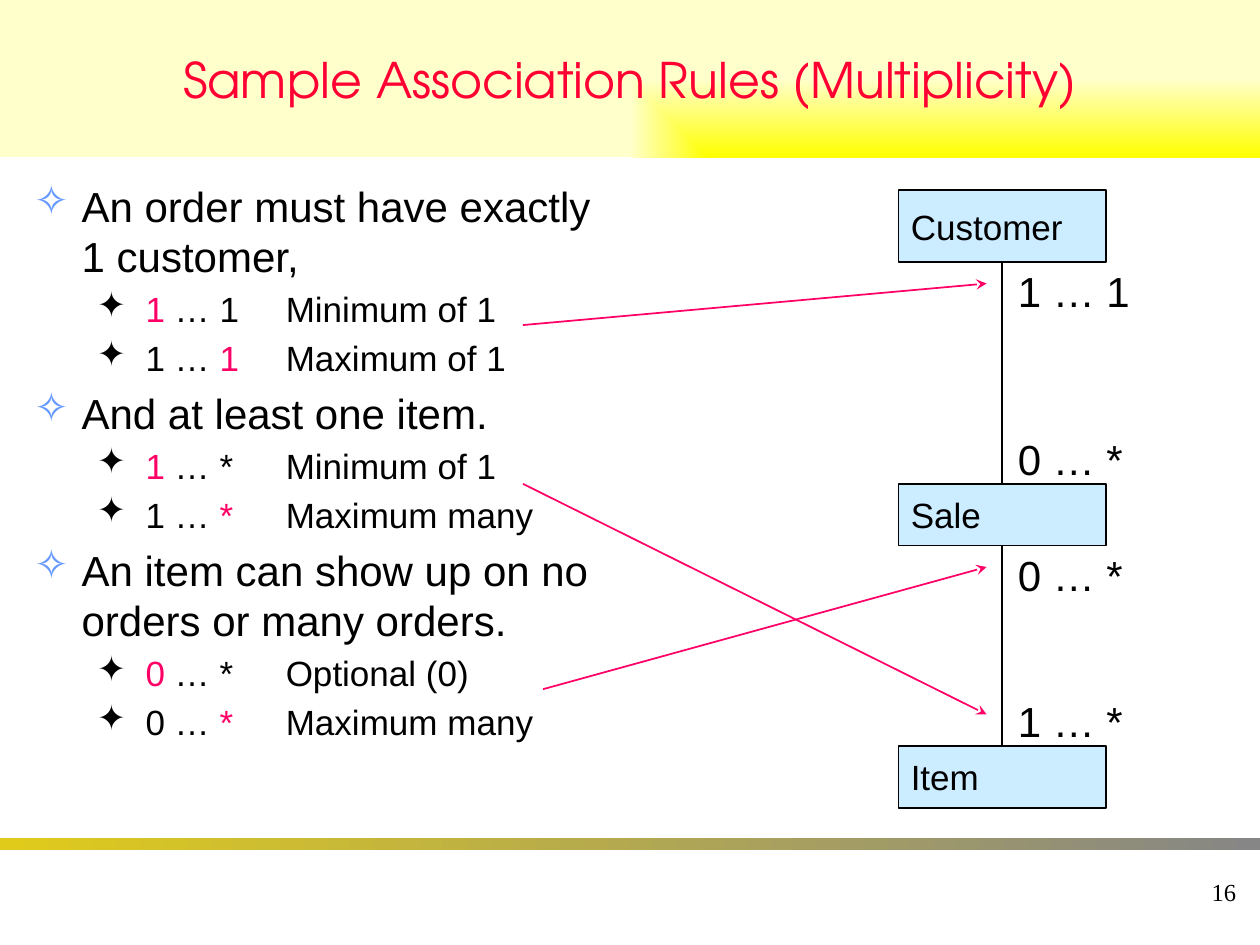
from lxml import etree
from pptx import Presentation
from pptx import util as u
from pptx.dml.color import RGBColor
from pptx.enum import shapes, text
from pptx.oxml import parse_xml
from pptx.oxml.ns import nsdecls, qn

RED = RGBColor(0xFF, 0x00, 0x33)
PINK = RGBColor(0xFF, 0x00, 0x66)
BLACK = RGBColor(0x00, 0x00, 0x00)
BLUE = RGBColor(0x66, 0x99, 0xFF)
SKY = RGBColor(0xCC, 0xEC, 0xFF)
YELLOW = RGBColor(0xFF, 0xFF, 0x00)
CREAM = RGBColor(0xFF, 0xFF, 0xCC)
GOLD = RGBColor(0xE0, 0xCB, 0x1B)
GREY = RGBColor(0x86, 0x86, 0x86)

COLUMNS, ROWS = 100, 75
BULLETS = [("✧", BLUE, 24, 0.38, 0.38), ("✦", BLACK, 20, 0.81, 0.31)]


class SlideBuilder:
    font = "Arial"

    def __init__(self, presentation):
        self.column = presentation.slide_width / COLUMNS
        self.row = presentation.slide_height / ROWS
        self.slide = presentation.slides.add_slide(presentation.slide_layouts[5])

    def place(self, left, top, width, height):
        return (round(left * self.column), round(top * self.row),
                round(width * self.column), round(height * self.row))

    def style(self, paragraph, size, color=BLACK, font=None):
        paragraph.font.size = u.Pt(size)
        paragraph.font.name = font or self.font
        paragraph.font.color.rgb = color

    def gradient(self, shape, start, end):
        shape.fill.gradient()
        shape.fill.gradient_angle = 0
        for stop, position, color in zip(shape.fill.gradient_stops, (0, 1), (start, end)):
            stop.position, stop.color.rgb = position, color

    def title(self, wording, area):
        title = self.slide.shapes.title
        title.left, title.top, title.width, title.height = self.place(*area)
        self.gradient(title, YELLOW, CREAM)
        linear = title.fill._xPr.find(".//" + qn("a:lin"))
        linear.getparent().replace(linear, parse_xml(
            f'<a:path {nsdecls("a")} path="rect">'
            '<a:fillToRect l="100000" t="100000"/></a:path>'))
        frame = title.text_frame
        frame.text = wording
        frame.vertical_anchor = text.MSO_ANCHOR.MIDDLE
        frame.paragraphs[0].alignment = text.PP_ALIGN.CENTER
        self.style(frame.paragraphs[0], 28, RED, "TeX Gyre Adventor")

    def rectangle(self, area):
        shape = self.slide.shapes.add_shape(shapes.MSO_SHAPE.RECTANGLE, *self.place(*area))
        shape.shadow.inherit = False
        return shape

    def bar(self, area):
        shape = self.rectangle(area)
        shape.line.fill.background()
        self.gradient(shape, GOLD, GREY)

    def box(self, wording, area):
        shape = self.rectangle(area)
        shape.fill.solid()
        shape.fill.fore_color.rgb = SKY
        shape.line.color.rgb = BLACK
        shape.line.width = u.Pt(1)
        shape.text_frame.text = wording
        paragraph = shape.text_frame.paragraphs[0]
        paragraph.alignment = text.PP_ALIGN.LEFT
        self.style(paragraph, 20)
        return shape

    def label(self, wording, area, size=24, font=None):
        frame = self.slide.shapes.add_textbox(*self.place(*area)).text_frame
        frame.text = wording
        frame.word_wrap = False
        self.style(frame.paragraphs[0], size, font=font)
        return frame

    def page_number(self, wording, area):
        frame = self.label(wording, area, 14, "Times New Roman")
        frame.word_wrap = True
        frame.vertical_anchor = text.MSO_ANCHOR.MIDDLE
        frame.paragraphs[0].alignment = text.PP_ALIGN.RIGHT

    def bullet(self, paragraph, level, runs):
        mark, color, size, margin, hanging = BULLETS[level]
        paragraph.level = level
        self.style(paragraph, size)
        for wording, highlighted in runs:
            run = paragraph.add_run()
            run.text = wording
            if highlighted:
                run.font.color.rgb = PINK
        properties = paragraph._p.get_or_add_pPr()
        properties.set("marL", str(u.Inches(margin)))
        properties.set("indent", str(-u.Inches(hanging)))
        details = parse_xml(
            f'<a:pPr {nsdecls("a")}><a:spcBef><a:spcPct val="20000"/></a:spcBef>'
            f'<a:buClr><a:srgbClr val="{color}"/></a:buClr>'
            f'<a:buChar char="{mark}"/></a:pPr>')
        for position, element in enumerate(list(details)):
            properties.insert(position, element)

    def outline(self, rules, area):
        frame = self.slide.shapes.add_textbox(*self.place(*area)).text_frame
        frame.word_wrap = True
        items = []
        for statement, low, high, low_note, high_note in rules:
            items += [
                (0, [(statement, False)]),
                (1, [(" ", False), (low, True), (f" … {high}\t{low_note}", False)]),
                (1, [(f" {low} … ", False), (high, True), (f"\t{high_note}", False)]),
            ]
        for index, (level, runs) in enumerate(items):
            paragraph = frame.add_paragraph() if index else frame.paragraphs[0]
            self.bullet(paragraph, level, runs)

    def line(self, start, end, color):
        points = self.place(*start, *end)
        connector = self.slide.shapes.add_connector(shapes.MSO_CONNECTOR.STRAIGHT, *points)
        connector.line.color.rgb = color
        connector.line.width = u.Pt(1)
        etree.SubElement(connector._element.spPr, qn("a:effectLst"))
        return connector

    def arrow(self, start, end):
        connector = self.line(start, end, PINK)
        etree.SubElement(connector.line._get_or_add_ln(), qn("a:tailEnd"), type="stealth")

    def join(self, lower, upper):
        connector = self.line((0, 0), (0, 0), BLACK)
        connector.begin_connect(lower, 0)
        connector.end_connect(upper, 2)


def main():
    presentation = Presentation()
    presentation.slide_width, presentation.slide_height = u.Inches(10), u.Inches(7.5)
    builder = SlideBuilder(presentation)

    builder.bar((0, 66.5, COLUMNS, 1))
    builder.title("Sample Association Rules (Multiplicity)", (0, 0, COLUMNS, 12.5))
    builder.outline([
        ("An order must have exactly 1 customer,", "1", "1", "Minimum of 1", "Maximum of 1"),
        ("And at least one item.", "1", "*", "Minimum of 1", "Maximum many"),
        ("An item can show up on no orders or many orders.", "0", "*",
         "Optional (0)", "Maximum many"),
    ], (1.7, 13.8, 48.3, 52))
    builder.page_number("16", (78.3, 68.3, 20.8, 5))

    for start, end in [((41.5, 25.8), (78.3, 22.5)),
                       ((41.5, 38.4), (78.3, 56.7)),
                       ((43.1, 54.7), (78.3, 45))]:
        builder.arrow(start, end)

    customer, sale, item = [
        builder.box(name, (71.3, top, 16.5, height))
        for name, top, height in [("Customer", 15.1, 5.7), ("Sale", 38.4, 4.9),
                                  ("Item", 59.2, 4.9)]]
    for wording, top in [("1 … 1", 20.6), ("0 … *", 33.9), ("0 … *", 43.1), ("1 … *", 54.7)]:
        builder.label(wording, (79.8, top, 10.4 if "*" in wording else 11, 5.1))
    builder.join(sale, customer)
    builder.join(item, sale)

    presentation.save("out.pptx")


if __name__ == "__main__":
    main()
